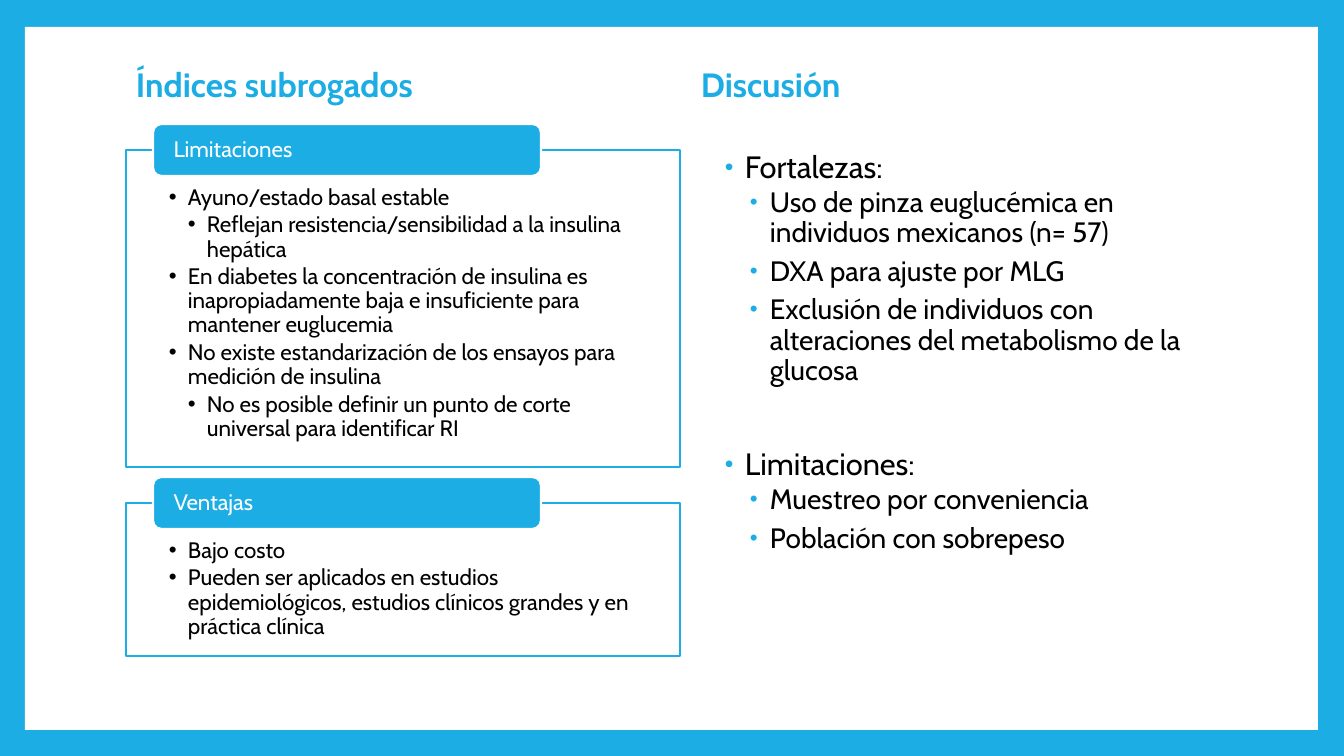
from pptx import Presentation, util as u
from pptx.dml.color import RGBColor
from pptx.enum import shapes, text
from pptx.oxml.ns import qn
from lxml import etree

PX = 914400 / 100.8
HUES = {"blue": "1CADE4", "white": "FFFFFF", "black": "000000"}
TOP, MID = text.MSO_ANCHOR.TOP, text.MSO_ANCHOR.MIDDLE


def px(n):
    return u.Emu(round(n * PX))


def hue(name):
    return RGBColor.from_string(HUES[name])


class Deck:
    font = "Cabin"

    def __init__(self, wide, high):
        self.prs = Presentation()
        self.prs.slide_width, self.prs.slide_height = px(wide), px(high)
        self.slide = self.prs.slides.add_slide(self.prs.slide_layouts[6])

    def back(self, color):
        fill = self.slide.background.fill
        fill.solid()
        fill.fore_color.rgb = hue(color)

    def shape(self, kind, box, color, line=None):
        item = self.slide.shapes.add_shape(kind, *map(px, box))
        item.shadow.inherit = False
        item.fill.solid()
        item.fill.fore_color.rgb = hue(color)
        if line:
            item.line.color.rgb = hue(line)
            item.line.width = u.Pt(1.5)
        else:
            item.line.fill.background()
        return item

    def box(self, box):
        return self.slide.shapes.add_textbox(*map(px, box))

    def frame(self, item, pads, anchor):
        tf = item.text_frame
        tf.word_wrap = True
        tf.vertical_anchor = anchor
        tf.margin_left, tf.margin_top, tf.margin_right, tf.margin_bottom = map(px, pads)
        return tf

    def para(self, tf, words, size, color, bold=False, before=0, after=0):
        p = tf.paragraphs[0]
        if p.runs:
            p = tf.add_paragraph()
        p.text = words
        p.alignment = text.PP_ALIGN.LEFT
        p.line_spacing = 0.9
        p.space_before, p.space_after = u.Pt(before), u.Pt(after)
        p.font.name, p.font.size, p.font.bold = self.font, u.Pt(size), bold
        p.font.color.rgb = hue(color)
        return p

    def bullet(self, p, left, hang, color=None, scale=100):
        props = p._p.get_or_add_pPr()
        props.set("marL", str(px(left)))
        props.set("indent", str(px(-hang)))
        if color:
            tint = etree.SubElement(props, qn("a:buClr"))
            etree.SubElement(tint, qn("a:srgbClr"), val=HUES[color])
        etree.SubElement(props, qn("a:buSzPct"), val=str(scale * 1000))
        etree.SubElement(props, qn("a:buFont"), typeface="Arial")
        etree.SubElement(props, qn("a:buChar"), char="•")
        rest = props.find(qn("a:defRPr"))
        if rest is not None:
            props.append(rest)

    def title(self, left, words):
        tf = self.frame(self.box((left, 44, 524, 86)), (10, 5, 10, 5), MID)
        self.para(tf, words, 24, "blue", bold=True)

    def panel(self, top, high, head, rows):
        rect = self.shape(shapes.MSO_SHAPE.RECTANGLE, (126, top, 554, high), "white", "blue")
        tf = self.frame(rect, (43, 36, 43, 12), TOP)
        for level, words in rows:
            p = self.para(tf, words, 16, "black", after=2.4)
            self.bullet(p, 19 * level, 19)
        tab = self.shape(shapes.MSO_SHAPE.ROUNDED_RECTANGLE, (153, top - 26, 388, 52), "blue", "white")
        tf = self.frame(tab, (18, 0, 18, 0), MID)
        self.para(tf, head, 16, "white")

    def points(self, box, groups):
        tf = self.frame(self.box(box), (10, 5, 10, 5), TOP)
        for n, (head, rows) in enumerate(groups):
            p = self.para(tf, head, 22, "black", before=41 if n else 0)
            self.bullet(p, 25, 20, "blue", 80)
            for words in rows:
                p = self.para(tf, words, 20, "black", before=2, after=4)
                self.bullet(p, 50, 20, "blue", 80)


LIMITS = [
    (1, "Ayuno/estado basal estable"),
    (2, "Reflejan resistencia/sensibilidad a la insulina hepática"),
    (1, "En diabetes la concentración de insulina es inapropiadamente baja e insuficiente para mantener euglucemia"),
    (1, "No existe estandarización de los ensayos para medición de insulina"),
    (2, "No es posible definir un punto de corte universal para identificar RI"),
]
GAINS = [
    (1, "Bajo costo"),
    (1, "Pueden ser aplicados en estudios epidemiológicos, estudios clínicos grandes y en práctica clínica"),
]
TALK = [
    ("Fortalezas:", [
        "Uso de pinza euglucémica en individuos mexicanos (n= 57)",
        "DXA para ajuste por MLG",
        "Exclusión de individuos con alteraciones del metabolismo de la glucosa",
    ]),
    ("Limitaciones:", ["Muestreo por conveniencia", "Población con sobrepeso"]),
]


def main():
    deck = Deck(1344, 756)
    deck.back("blue")
    deck.shape(shapes.MSO_SHAPE.RECTANGLE, (25, 27, 1293, 703), "white")
    deck.title(126, "Índices subrogados")
    deck.panel(150, 317, "Limitaciones", LIMITS)
    deck.panel(503, 153, "Ventajas", GAINS)
    deck.title(691, "Discusión")
    deck.points((710, 147, 524, 508), TALK)
    deck.prs.save("out.pptx")


if __name__ == "__main__":
    main()
